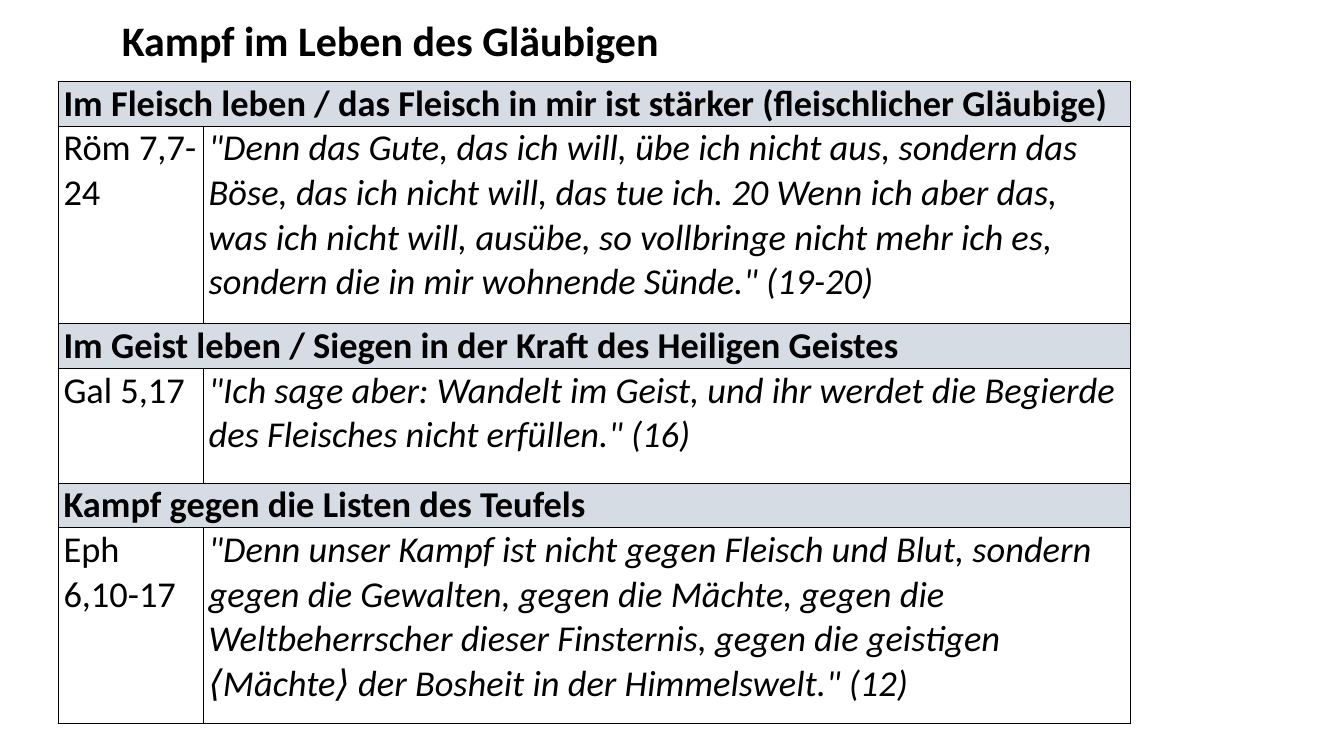
from dataclasses import dataclass
from itertools import chain

from lxml.etree import SubElement
from pptx import Presentation
from pptx.dml.color import RGBColor
from pptx.enum.text import MSO_AUTO_SIZE
from pptx.oxml.ns import qn
from pptx.util import Inches, Pt


@dataclass(frozen=True)
class Theme:
    font: str = "Calibri"
    bracket_font: str = "Cambria"
    ink: str = "000000"
    heading_fill: str = "D5DCE4"
    title_size: int = 30
    table_size: int = 26
    border_width: int = 1


THEME = Theme()

SECTIONS = [
    (
        "Im Fleisch leben / das Fleisch in mir ist stärker (fleischlicher Gläubige)",
        "Röm 7,7-24",
        '"Denn das Gute, das ich will, übe ich nicht aus, sondern das Böse, das ich nicht will, '
        "das tue ich. 20 Wenn ich aber das, was ich nicht will, ausübe, so vollbringe nicht mehr "
        'ich es, sondern die in mir wohnende Sünde." (19-20)',
        1.96,
    ),
    (
        "Im Geist leben / Siegen in der Kraft des Heiligen Geistes",
        "Gal 5,17",
        '"Ich sage aber: Wandelt im Geist, und ihr werdet die Begierde des Fleisches '
        'nicht erfüllen." (16)',
        1.14,
    ),
    (
        "Kampf gegen die Listen des Teufels",
        "Eph 6,10-17",
        '"Denn unser Kampf ist nicht gegen Fleisch und Blut, sondern gegen die Gewalten, '
        "gegen die Mächte, gegen die Weltbeherrscher dieser Finsternis, gegen die geistigen "
        '⟨Mächte⟩ der Bosheit in der Himmelswelt." (12)',
        1.94,
    ),
]
HEADING_HEIGHT = 0.44
COLUMN_WIDTHS = (1.44, 9.19)


def split_brackets(text):
    pieces = text.replace("⟨", "\n⟨\n").replace("⟩", "\n⟩\n")
    return pieces.split("\n")


def write_text(frame, text, size, bold=False, italic=False):
    paragraph = frame.paragraphs[0]
    font = paragraph.font
    font.name = THEME.font
    font.size = Pt(size)
    font.bold = bold
    font.italic = italic
    font.color.rgb = RGBColor.from_string(THEME.ink)
    for piece in split_brackets(text):
        run = paragraph.add_run()
        run.text = piece
        if piece in ("⟨", "⟩"):
            run.font.name = THEME.bracket_font


def add_borders(cell):
    properties = cell._tc.get_or_add_tcPr()
    for side in ("lnL", "lnR", "lnT", "lnB"):
        line = SubElement(properties, qn(f"a:{side}"), w=str(Pt(THEME.border_width)))
        fill = SubElement(line, qn("a:solidFill"))
        SubElement(fill, qn("a:srgbClr"), val=THEME.ink)


def style_cell(cell, fill_color=None):
    cell.margin_left = cell.margin_right = Inches(0.05)
    cell.margin_top = cell.margin_bottom = 0
    add_borders(cell)
    if fill_color:
        cell.fill.solid()
        cell.fill.fore_color.rgb = RGBColor.from_string(fill_color)
    else:
        cell.fill.background()


def add_title(slide, text):
    shape = slide.shapes.add_textbox(Inches(1.11), Inches(0.09), Inches(6.67), Inches(0.61))
    frame = shape.text_frame
    frame.word_wrap = True
    frame.auto_size = MSO_AUTO_SIZE.SHAPE_TO_FIT_TEXT
    write_text(frame, text, THEME.title_size, bold=True)


def add_verse_table(slide, sections):
    heights = list(chain.from_iterable((HEADING_HEIGHT, section[3]) for section in sections))
    table = slide.shapes.add_table(
        len(heights), len(COLUMN_WIDTHS), Inches(0.58), Inches(0.81),
        Inches(sum(COLUMN_WIDTHS)), Inches(sum(heights)),
    ).table
    for column, width in zip(table.columns, COLUMN_WIDTHS):
        column.width = Inches(width)
    for index, (row, height) in enumerate(zip(table.rows, heights)):
        row.height = Inches(height)
        for cell in row.cells:
            style_cell(cell, THEME.heading_fill if index % 2 == 0 else None)
    for index, (heading, reference, verse, _) in enumerate(sections):
        heading_cell = table.cell(2 * index, 0)
        heading_cell.merge(table.cell(2 * index, 1))
        write_text(heading_cell.text_frame, heading, THEME.table_size, bold=True)
        write_text(table.cell(2 * index + 1, 0).text_frame, reference, THEME.table_size)
        write_text(table.cell(2 * index + 1, 1).text_frame, verse, THEME.table_size, italic=True)


def main():
    presentation = Presentation()
    presentation.slide_width = Inches(13.33)
    presentation.slide_height = Inches(7.5)
    slide = presentation.slides.add_slide(presentation.slide_layouts[6])
    add_verse_table(slide, SECTIONS)
    add_title(slide, "Kampf im Leben des Gläubigen")
    presentation.save("out.pptx")


if __name__ == "__main__":
    main()
